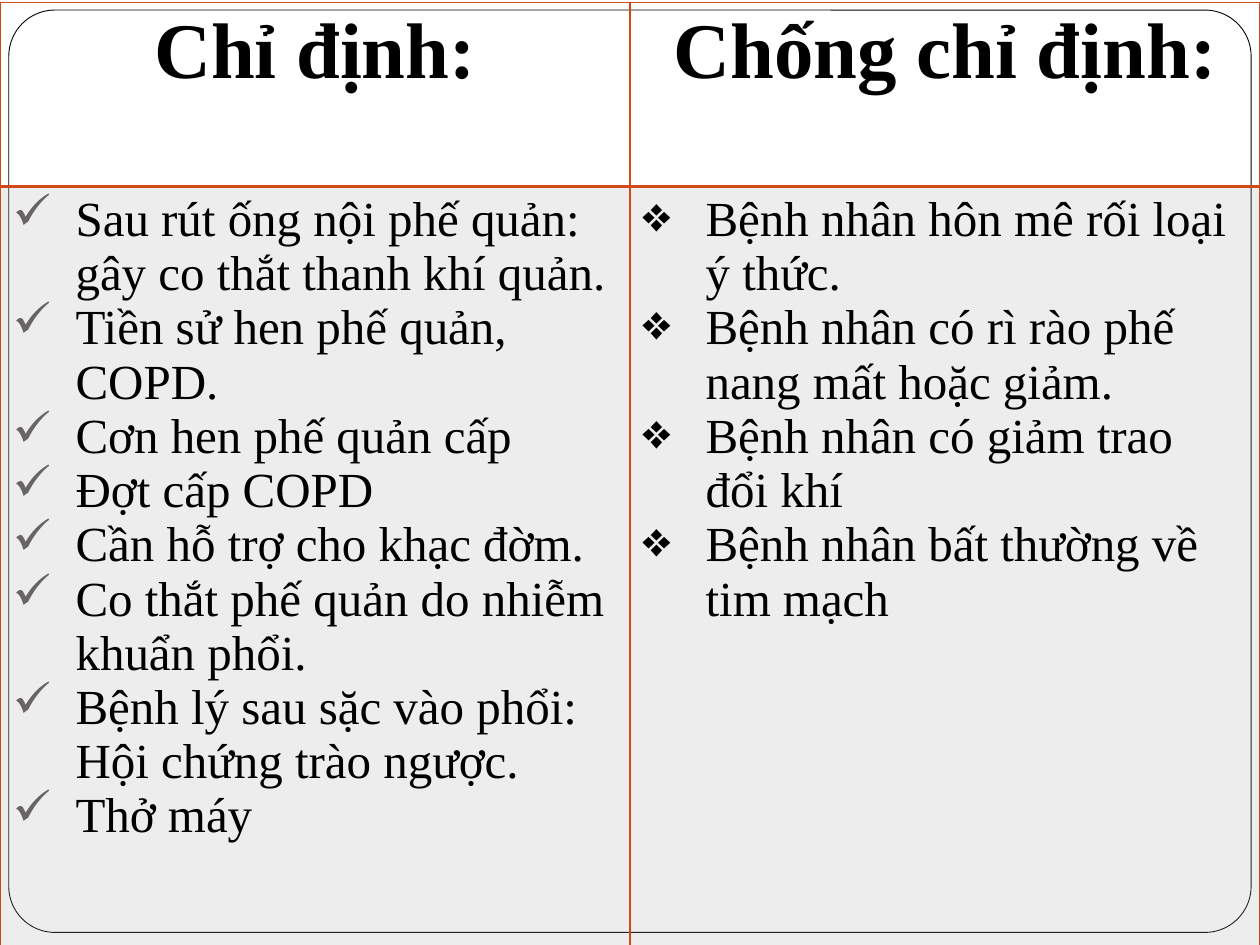
from lxml import etree
from pptx import Presentation, util as u
from pptx.dml.color import RGBColor
from pptx.enum import shapes, text
from pptx.oxml.ns import qn

COLORS = {"paper": "FFFFFF", "ink": "000000", "rule": "D34817",
          "shade": "A6A6A6", "check": "696464"}
FONT = "Times New Roman"
WIDTH, HEIGHT = 10, 7.5
TABLE_TOP = 0.02
ROW_HEIGHTS = [1.46, 6.05]
TITLE_SIZE, ITEM_SIZE = 45, 28
INDENT = 0.5

COLUMNS = [
    {"title": "Chỉ định:", "bullet": "✓", "bullet_color": "check", "items": [
        "Sau rút ống nội phế quản: gây co thắt thanh khí quản.",
        "Tiền sử hen phế quản, COPD.",
        "Cơn hen phế quản cấp",
        "Đợt cấp COPD",
        "Cần hỗ trợ cho khạc đờm.",
        "Co thắt phế quản do nhiễm khuẩn phổi.",
        "Bệnh lý sau sặc vào phổi: Hội chứng trào ngược.",
        "Thở máy",
    ]},
    {"title": "Chống chỉ định:", "bullet": "❖", "bullet_color": "ink", "items": [
        "Bệnh nhân hôn mê rối loại ý thức.",
        "Bệnh nhân có rì rào phế nang mất hoặc giảm.",
        "Bệnh nhân có giảm trao đổi khí",
        "Bệnh nhân bất thường về tim mạch",
    ]},
]


def rgb(name):
    return RGBColor.from_string(COLORS[name])


def add_color(parent, name):
    return etree.SubElement(parent, qn("a:srgbClr"), val=COLORS[name])


def style_font(paragraph, size, bold):
    font = paragraph.font
    font.name, font.size, font.bold = FONT, u.Pt(size), bold
    font.color.rgb = rgb("ink")


def set_borders(cell, widths):
    props = cell._tc.get_or_add_tcPr()
    for place, (side, width) in enumerate(zip("LRTB", widths)):
        line = etree.Element(qn(f"a:ln{side}"), w=str(u.Pt(width)))
        add_color(etree.SubElement(line, qn("a:solidFill")), "rule")
        props.insert(place, line)


def write_title(cell, title):
    paragraph = cell.text_frame.paragraphs[0]
    paragraph.text = title
    paragraph.alignment = text.PP_ALIGN.CENTER
    style_font(paragraph, TITLE_SIZE, True)
    cell.fill.background()
    set_borders(cell, [1, 1, 1, 2])


def write_items(cell, column):
    frame = cell.text_frame
    frame.text = "\n".join(column["items"])
    for paragraph in frame.paragraphs:
        props = paragraph._p.get_or_add_pPr()
        props.set("marL", str(u.Inches(INDENT)))
        props.set("indent", str(-u.Inches(INDENT)))
        add_color(etree.SubElement(props, qn("a:buClr")), column["bullet_color"])
        etree.SubElement(props, qn("a:buChar"), char=column["bullet"])
        style_font(paragraph, ITEM_SIZE, False)
    cell.fill.solid()
    cell.fill.fore_color.rgb = rgb("shade")
    shade = cell._tc.tcPr.find(".//" + qn("a:srgbClr"))
    etree.SubElement(shade, qn("a:alpha"), val="20000")
    set_borders(cell, [1, 1, 2, 1])


def add_frame(slide):
    frame = slide.shapes.add_shape(
        shapes.MSO_SHAPE.ROUNDED_RECTANGLE,
        *map(u.Inches, (0.07, 0.08, 9.86, 7.32)))
    frame.adjustments[0] = 0.05
    frame.shadow.inherit = False
    frame.fill.solid()
    frame.fill.fore_color.rgb = rgb("paper")
    frame.line.color.rgb = rgb("ink")
    frame.line.width = u.Pt(0.5)


def add_comparison(slide):
    table = slide.shapes.add_table(
        len(ROW_HEIGHTS), len(COLUMNS), 0, u.Inches(TABLE_TOP),
        u.Inches(WIDTH), u.Inches(sum(ROW_HEIGHTS))).table
    table.first_row = table.horz_banding = False
    for row, height in zip(table.rows, ROW_HEIGHTS):
        row.height = u.Inches(height)
    for index, column in enumerate(COLUMNS):
        write_title(table.cell(0, index), column["title"])
        write_items(table.cell(1, index), column)


def main():
    deck = Presentation()
    deck.slide_width, deck.slide_height = u.Inches(WIDTH), u.Inches(HEIGHT)
    slide = deck.slides.add_slide(deck.slide_layouts[6])
    add_frame(slide)
    add_comparison(slide)
    deck.save("out.pptx")


if __name__ == "__main__":
    main()
